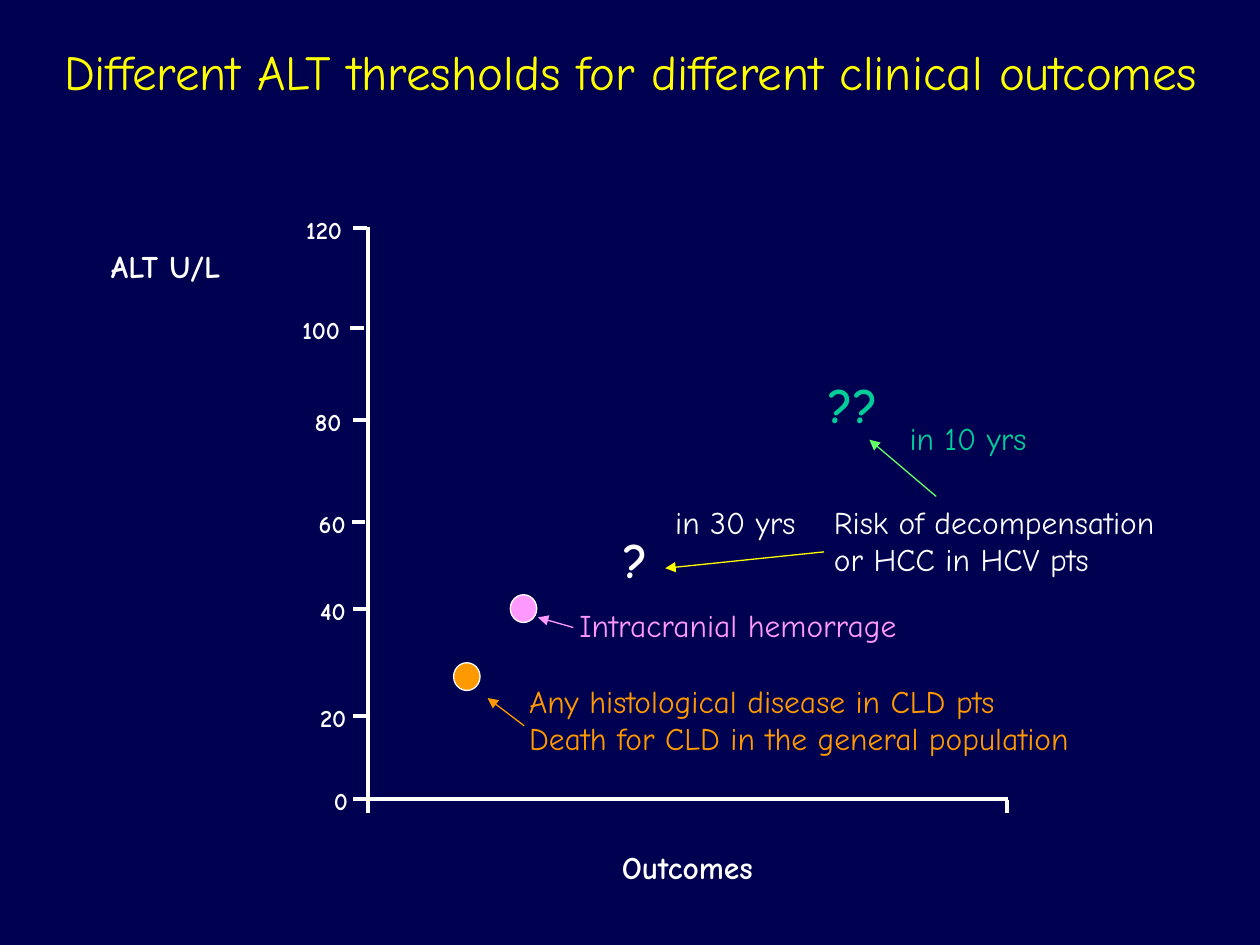
from typing import NamedTuple

from lxml import etree
from pptx import Presentation
from pptx import util as u
from pptx.dml.color import RGBColor
from pptx.enum import shapes, text
from pptx.oxml.ns import qn

FONT = "Comic Neue"
COLORS = {
    "navy": "000050",
    "white": "FFFFFF",
    "yellow": "FFFF00",
    "orange": "FF9900",
    "pink": "FF99FF",
    "teal": "00CC99",
    "green": "66FF66",
}
AXIS_LEFT, AXIS_TOP, AXIS_RIGHT, AXIS_BOTTOM = 2.92, 1.8, 8, 6.34
AXIS_WIDTH, THIN_WIDTH = 2.25, 0.75
TICK_LENGTH, DIGIT_WIDTH = 0.11, 0.12


class Tick(NamedTuple):
    value: int
    x: float
    y: float
    label_x: float


class Label(NamedTuple):
    lines: list[str]
    x: float
    y: float
    w: float
    h: float
    color: str = "white"
    size: int = 18
    bold: bool = False


class Arrow(NamedTuple):
    x1: float
    y1: float
    x2: float
    y2: float
    color: str


class Dot(NamedTuple):
    x: float
    y: float
    color: str


TICKS = [
    Tick(0, 2.91, 6.34, 2.65),
    Tick(20, 2.91, 5.68, 2.54),
    Tick(40, 2.91, 4.83, 2.54),
    Tick(60, 2.9, 4.14, 2.53),
    Tick(80, 2.91, 3.33, 2.5),
    Tick(100, 2.89, 2.6, 2.4),
    Tick(120, 2.91, 1.81, 2.43),
]
AXIS_TITLES = [
    Label(["ALT U/L"], 0.42, 1.96, 1.79, 0.31, bold=True),
    Label(["Outcomes"], 2.87, 6.73, 5.17, 0.31, bold=True),
]
LABELS = [
    Label(["Any histological disease in CLD pts",
           "Death for CLD in the general population"], 4.1, 5.36, 4.92, 0.71, "orange"),
    Label(["Intracranial hemorrage"], 4.5, 4.76, 2.98, 0.41, "pink"),
    Label(["Risk of decompensation", "or HCC in HCV pts"], 6.52, 3.94, 3.06, 0.71),
    Label(["in 30 yrs"], 5.26, 3.94, 1.25, 0.41),
    Label(["in 10 yrs"], 7.12, 3.28, 1.21, 0.41, "teal"),
    Label(["?"], 4.85, 4.15, 0.42, 0.57, size=28, bold=True),
    Label(["??"], 6.48, 2.92, 0.65, 0.57, "teal", 28, True),
]
ARROWS = [
    Arrow(4.16, 5.76, 3.87, 5.54, "orange"),
    Arrow(4.55, 4.98, 4.27, 4.9, "pink"),
    Arrow(6.54, 4.38, 5.28, 4.51, "yellow"),
    Arrow(7.43, 3.94, 6.9, 3.49, "green"),
]
DOTS = [Dot(3.6, 5.26, "orange"), Dot(4.05, 4.72, "pink")]


def rgb(name: str) -> RGBColor:
    return RGBColor.from_string(COLORS[name])


def add_run(p, content: str, color: str, size: int, bold: bool = False) -> None:
    r = p.add_run()
    r.text = content
    r.font.name = FONT
    r.font.size = u.Pt(size)
    r.font.bold = bold
    r.font.color.rgb = rgb(color)


def style_line(sp, color: str, width: float) -> None:
    sp.line.color.rgb = rgb(color)
    sp.line.width = u.Pt(width)


def set_margins(tf, across: float, down: float) -> None:
    tf.margin_left = tf.margin_right = u.Inches(across)
    tf.margin_top = tf.margin_bottom = u.Inches(down)


def add_label(s, label: Label, inset: bool = True, centered: bool = False) -> None:
    """Centered labels wrap inside their box; the others grow with their text."""
    sp = s.shapes.add_textbox(*map(u.Inches, (label.x, label.y, label.w, label.h)))
    tf = sp.text_frame
    tf.word_wrap = centered
    tf.auto_size = text.MSO_AUTO_SIZE.SHAPE_TO_FIT_TEXT
    set_margins(tf, *((0.1, 0.05) if inset else (0, 0)))
    for i, line in enumerate(label.lines):
        p = tf.add_paragraph() if i else tf.paragraphs[0]
        p.alignment = text.PP_ALIGN.CENTER if centered else text.PP_ALIGN.LEFT
        add_run(p, line, label.color, label.size, label.bold)


def add_line(s, x1: float, y1: float, x2: float, y2: float,
             color: str = "white", width: float = AXIS_WIDTH):
    sp = s.shapes.add_connector(shapes.MSO_CONNECTOR.STRAIGHT,
                                *map(u.Inches, (x1, y1, x2, y2)))
    style_line(sp, color, width)
    etree.SubElement(sp._element.spPr, qn("a:effectLst"))
    return sp


def add_arrow(s, arrow: Arrow) -> None:
    sp = add_line(s, *arrow, width=THIN_WIDTH)
    etree.SubElement(sp.line._get_or_add_ln(), qn("a:tailEnd"), type="triangle")


def add_dot(s, dot: Dot) -> None:
    sp = s.shapes.add_shape(shapes.MSO_SHAPE.OVAL,
                            *map(u.Inches, (dot.x, dot.y, 0.21, 0.22)))
    sp.shadow.inherit = False
    sp.fill.solid()
    sp.fill.fore_color.rgb = rgb(dot.color)
    style_line(sp, "white", THIN_WIDTH)


def add_axes(s) -> None:
    builder = s.shapes.build_freeform(u.Inches(AXIS_LEFT), u.Inches(AXIS_TOP))
    corners = [(AXIS_LEFT, AXIS_BOTTOM), (AXIS_RIGHT, AXIS_BOTTOM)]
    builder.add_line_segments([(u.Inches(x), u.Inches(y)) for x, y in corners],
                              close=False)
    sp = builder.convert_to_shape()
    sp.shadow.inherit = False
    sp.fill.background()
    style_line(sp, "white", AXIS_WIDTH)
    for x in (AXIS_LEFT, AXIS_RIGHT - 0.01):
        add_line(s, x, 6.35, x, 6.45)
    for tick in TICKS:
        add_line(s, tick.x, tick.y, tick.x - TICK_LENGTH, tick.y)
        number = str(tick.value)
        add_label(s, Label([number], tick.label_x, tick.y - 0.1,
                           DIGIT_WIDTH * len(number), 0.24, size=14, bold=True),
                  inset=False)


def add_title(s) -> None:
    sp = s.shapes.title
    sp.left, sp.top, sp.width, sp.height = map(u.Inches, (0.2, 0.35, 9.61, 1.51))
    tf = sp.text_frame
    tf.word_wrap = True
    tf.auto_size = text.MSO_AUTO_SIZE.NONE
    tf.vertical_anchor = text.MSO_ANCHOR.TOP
    set_margins(tf, 0.1, 0.05)
    p = tf.paragraphs[0]
    p.alignment = text.PP_ALIGN.CENTER
    p.line_spacing = 0.85
    add_run(p, "Different ALT thresholds for different clinical outcomes", "yellow", 28)


def main() -> None:
    prs = Presentation()
    prs.slide_width, prs.slide_height = u.Inches(10), u.Inches(7.5)
    s = prs.slides.add_slide(prs.slide_layouts.get_by_name("Title Only"))
    s.background.fill.solid()
    s.background.fill.fore_color.rgb = rgb("navy")
    add_title(s)
    add_axes(s)
    for label in AXIS_TITLES:
        add_label(s, label, inset=False, centered=True)
    for dot in DOTS:
        add_dot(s, dot)
    for label in LABELS:
        add_label(s, label)
    for arrow in ARROWS:
        add_arrow(s, arrow)
    prs.save("out.pptx")


if __name__ == "__main__":
    main()
